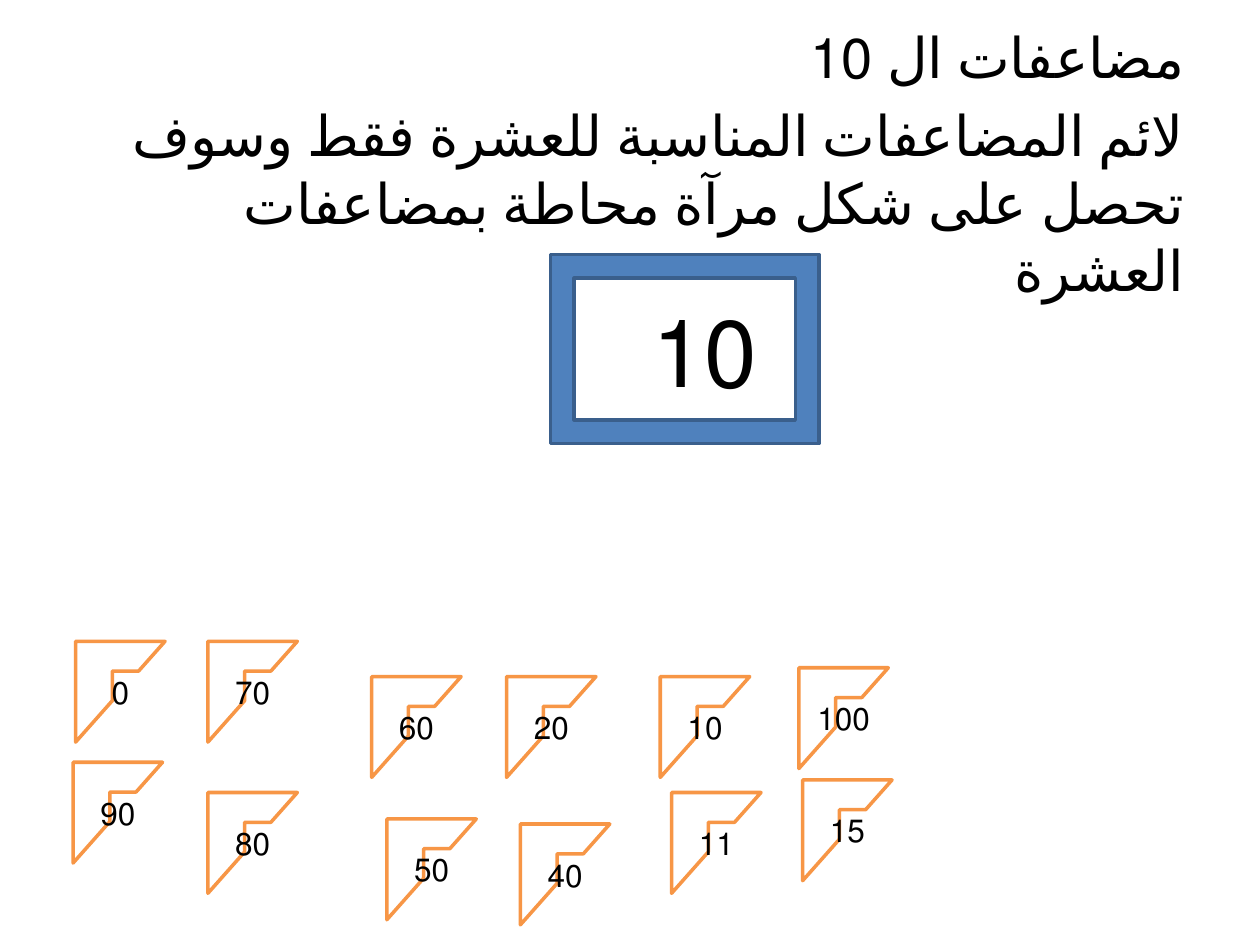
from dataclasses import dataclass
from typing import NamedTuple

from pptx import Presentation, util as u
from pptx.dml.color import RGBColor
from pptx.enum import lang, shapes, text


@dataclass(frozen=True)
class Theme:
    font: str = "Calibri"
    ink: str = "000000"
    paper: str = "FFFFFF"
    frame: str = "4F81BD"
    frame_line: str = "3A5F8C"
    tile_line: str = "F79646"
    line_width: float = 2
    body_size: float = 32
    center_size: float = 54
    tile_size: float = 18


class Area(NamedTuple):
    column: float
    row: float
    columns: float
    rows: float


class Tile(NamedTuple):
    label: str
    column: float
    row: float


THEME = Theme()
CELL = u.Inches(0.1)
COLUMNS, ROWS = 100, 75
TILE_COLUMNS, TILE_ROWS = 7.1, 8
TILE_ADJUSTMENTS = (0.333, 0.411)
BODY_AREA = Area(5, 1.3, 90, 65.7)
FRAME_AREA = Area(43.7, 20.2, 21.3, 15)
CENTER_AREA = Area(39.8, 22.8, 21.3, 10.1)

BODY = [
    "مضاعفات ال 10",
    "لائم المضاعفات المناسبة للعشرة فقط وسوف تحصل على شكل مرآة محاطة بمضاعفات العشرة",
]
TILES = [
    Tile("0", 6, 50.9),
    Tile("90", 5.8, 60.5),
    Tile("70", 16.5, 50.9),
    Tile("50", 30.7, 65),
    Tile("60", 29.5, 53.7),
    Tile("80", 16.5, 62.9),
    Tile("20", 40.2, 53.7),
    Tile("40", 41.3, 65.4),
    Tile("10", 52.4, 53.7),
    Tile("11", 53.3, 62.9),
    Tile("100", 63.4, 53),
    Tile("15", 63.7, 61.9),
]


def place(area: Area) -> list[int]:
    return [round(length * CELL) for length in area]


def write(shape, lines: list[str], size: float, align, space_share: float = 0) -> None:
    frame = shape.text_frame
    frame.word_wrap = True
    for index, line in enumerate(lines):
        para = frame.add_paragraph() if index else frame.paragraphs[0]
        span = para.add_run()
        span.text = line
        span.font.language_id = lang.MSO_LANGUAGE_ID.ARABIC
        para.alignment = align
        para.space_before = u.Pt(size * space_share)
        para.font.name = THEME.font
        para.font.size = u.Pt(size)
        para.font.color.rgb = RGBColor.from_string(THEME.ink)
        para._p.get_or_add_pPr().set("rtl", "1")


def add_text(page, area: Area, lines: list[str], size: float, space_share: float = 0) -> None:
    box = page.shapes.add_textbox(*place(area))
    write(box, lines, size, text.PP_ALIGN.RIGHT, space_share)


def add_outline(page, kind, area: Area, fill: str, line: str):
    shape = page.shapes.add_shape(kind, *place(area))
    shape.shadow.inherit = False
    shape.fill.solid()
    shape.fill.fore_color.rgb = RGBColor.from_string(fill)
    shape.line.color.rgb = RGBColor.from_string(line)
    shape.line.width = u.Pt(THEME.line_width)
    return shape


def add_tile(page, tile: Tile) -> None:
    area = Area(tile.column, tile.row, TILE_COLUMNS, TILE_ROWS)
    shape = add_outline(page, shapes.MSO_SHAPE.HALF_FRAME, area, THEME.paper, THEME.tile_line)
    for index, share in enumerate(TILE_ADJUSTMENTS):
        shape.adjustments[index] = share
    shape.text_frame.vertical_anchor = text.MSO_ANCHOR.MIDDLE
    write(shape, [tile.label], THEME.tile_size, text.PP_ALIGN.CENTER)


def main() -> None:
    deck = Presentation()
    deck.slide_width, deck.slide_height = COLUMNS * CELL, ROWS * CELL
    page = deck.slides.add_slide(deck.slide_layouts[6])
    add_text(page, BODY_AREA, BODY, THEME.body_size, 0.2)
    add_outline(page, shapes.MSO_SHAPE.FRAME, FRAME_AREA, THEME.frame, THEME.frame_line)
    add_text(page, CENTER_AREA, ["10"], THEME.center_size)
    for tile in TILES:
        add_tile(page, tile)
    deck.save("out.pptx")


if __name__ == "__main__":
    main()
